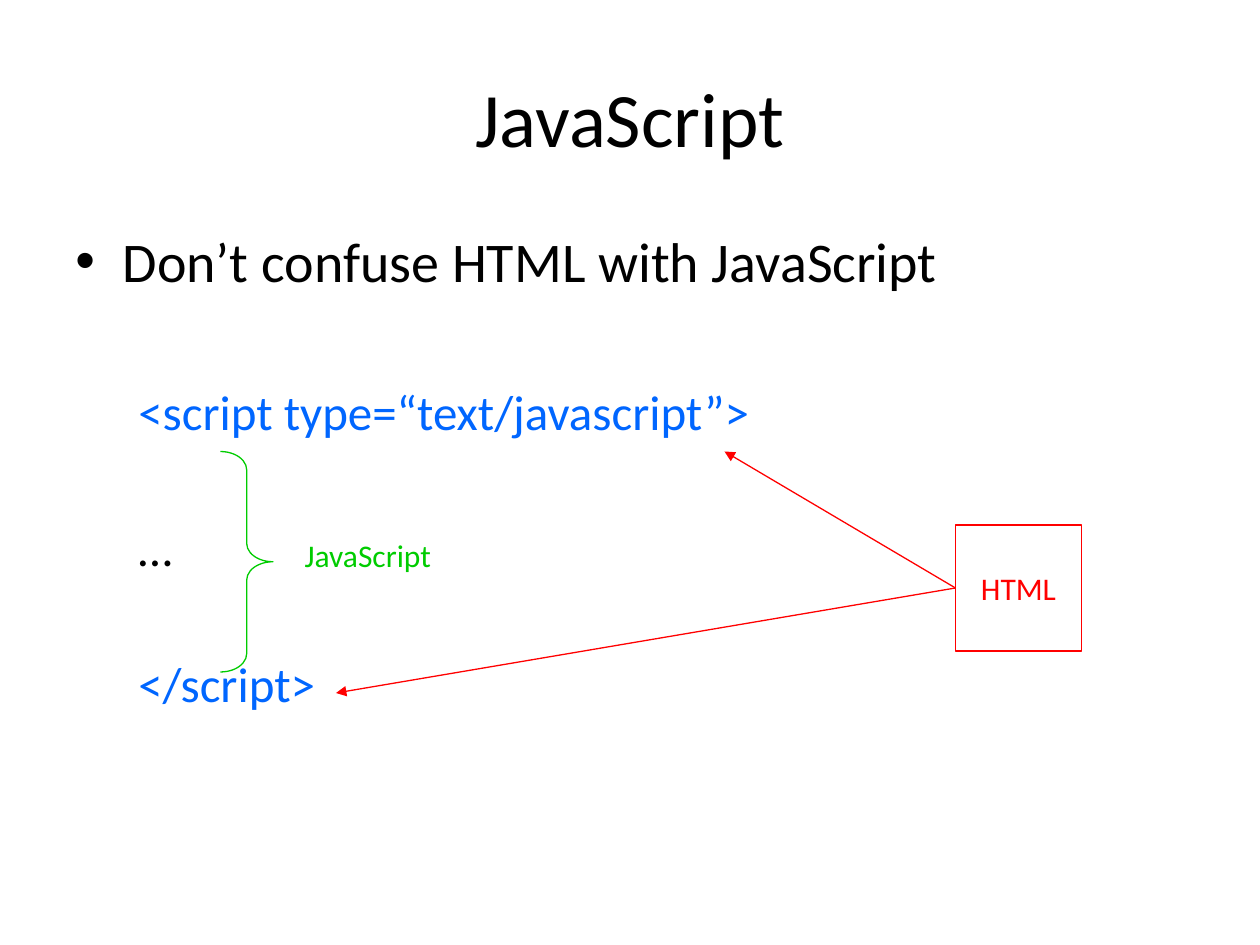
from dataclasses import dataclass

from lxml import etree
from pptx import Presentation
from pptx.dml.color import RGBColor
from pptx.enum.shapes import MSO_CONNECTOR, MSO_SHAPE
from pptx.enum.text import MSO_ANCHOR, MSO_AUTO_SIZE, PP_ALIGN
from pptx.oxml.ns import qn
from pptx.util import Pt

STRAIGHT = MSO_CONNECTOR.STRAIGHT
RECTANGLE, RIGHT_BRACE = MSO_SHAPE.RECTANGLE, MSO_SHAPE.RIGHT_BRACE
TOP, MIDDLE = MSO_ANCHOR.TOP, MSO_ANCHOR.MIDDLE
LEFT, CENTER = PP_ALIGN.LEFT, PP_ALIGN.CENTER
GROW = MSO_AUTO_SIZE.SHAPE_TO_FIT_TEXT
LEFT_SIDE = 1


@dataclass(frozen=True)
class Theme:
    font: str = "Calibri"
    text: RGBColor = RGBColor(0x00, 0x00, 0x00)
    tag: RGBColor = RGBColor(0x00, 0x66, 0xFF)
    html: RGBColor = RGBColor(0xFF, 0x00, 0x00)
    javascript: RGBColor = RGBColor(0x00, 0xCC, 0x00)
    title_size: int = 44
    bullet_size: int = 32
    code_size: int = 28
    label_size: int = 18
    line_width: float = 0.75


THEME = Theme()


def write(paragraph, text, size, color, align=LEFT):
    paragraph.text = text
    paragraph.alignment = align
    for run in paragraph.runs:
        run.font.name = THEME.font
        run.font.size = Pt(size)
        run.font.color.rgb = color


def add_text_box(shapes, box, anchor=TOP, wrap=True):
    frame = shapes.add_textbox(*map(Pt, box)).text_frame
    frame.word_wrap = wrap
    frame.vertical_anchor = anchor
    return frame


def add_outline(shapes, preset, box, color):
    outline = shapes.add_shape(preset, *map(Pt, box))
    outline.shadow.inherit = False
    outline.fill.background()
    outline.line.color.rgb = color
    outline.line.width = Pt(THEME.line_width)
    return outline


def add_arrow(shapes, source, target, color):
    arrow = shapes.add_connector(STRAIGHT, 0, 0, *map(Pt, target))
    arrow.begin_connect(source, LEFT_SIDE)
    arrow.line.color.rgb = color
    arrow.line.width = Pt(THEME.line_width)
    etree.SubElement(arrow.line._get_or_add_ln(), qn("a:tailEnd"), type="triangle")
    etree.SubElement(arrow._element.spPr, qn("a:effectLst"))


def indent(paragraph, margin, first_line=0, bullet=None):
    properties = paragraph._p.get_or_add_pPr()
    properties.set("marL", str(Pt(margin)))
    properties.set("indent", str(Pt(first_line)))
    if bullet:
        etree.SubElement(properties, qn("a:buFont"), typeface="Arial")
        etree.SubElement(properties, qn("a:buChar"), char=bullet)


def add_body(shapes):
    body = add_text_box(shapes, (36, 126, 648, 356.4))
    heading = body.paragraphs[0]
    write(heading, "Don’t confuse HTML with JavaScript", THEME.bullet_size, THEME.text)
    indent(heading, 27, -27, "•")
    code_lines = (
        ("<script type=“text/javascript”>", THEME.tag, 50),
        ("…", THEME.text, 44),
        ("</script>", THEME.tag, 44),
    )
    for text, color, gap in code_lines:
        code = body.add_paragraph()
        write(code, text, THEME.code_size, color)
        code.space_before = Pt(gap)
        indent(code, 36)


def add_html_note(shapes):
    note = add_outline(shapes, RECTANGLE, (546, 300, 72, 72), THEME.html)
    note.text_frame.word_wrap = False
    note.text_frame.vertical_anchor = MIDDLE
    write(note.text_frame.paragraphs[0], "HTML", THEME.label_size, THEME.html, CENTER)
    for tag_end in ((414, 258), (192, 396)):
        add_arrow(shapes, note, tag_end, THEME.html)


def add_javascript_note(shapes):
    brace = add_outline(shapes, RIGHT_BRACE, (126, 258, 30, 126), THEME.javascript)
    brace.adjustments[0] = 0.35
    label = add_text_box(shapes, (167, 303, 98.6, 29), wrap=False)
    label.auto_size = GROW
    write(label.paragraphs[0], "JavaScript", THEME.label_size, THEME.javascript)


def main():
    presentation = Presentation()
    presentation.slide_width, presentation.slide_height = Pt(720), Pt(540)
    shapes = presentation.slides.add_slide(presentation.slide_layouts[6]).shapes
    title = add_text_box(shapes, (36, 21.6, 648, 90), MIDDLE)
    write(title.paragraphs[0], "JavaScript", THEME.title_size, THEME.text, CENTER)
    add_body(shapes)
    add_html_note(shapes.add_group_shape().shapes)
    add_javascript_note(shapes.add_group_shape().shapes)
    presentation.save("out.pptx")


if __name__ == "__main__":
    main()
